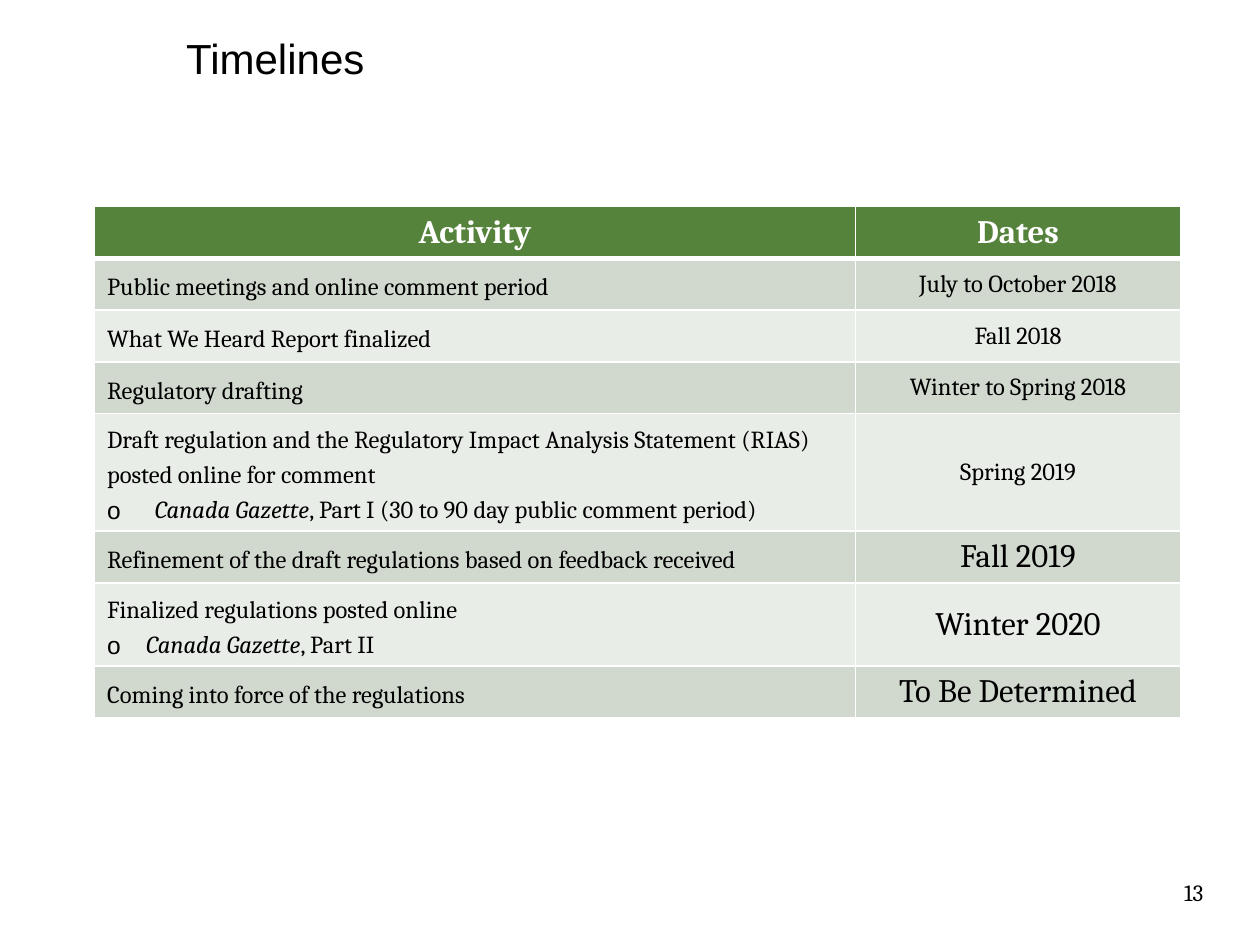
import pptx
import pptx.dml.color
import pptx.enum.text
import pptx.oxml
import pptx.oxml.ns
import pptx.util

Inches = pptx.util.Inches
Pt = pptx.util.Pt
COLORS = {"text": "000000", "white": "FFFFFF", "header": "55833B", "odd": "D1D9CE", "even": "E9EDE8"}
COLUMN_WIDTHS = [6.04, 2.58]
ROW_HEIGHTS = {1: 0.41, 2: 0.65, 3: 0.93}
SCHEDULE = [
    (["Public meetings and online comment period"], None, "July to October 2018", 14, 1),
    (["What We Heard Report finalized"], None, "Fall 2018", 14, 1),
    (["Regulatory drafting"], None, "Winter to Spring 2018", 14, 1),
    (["Draft regulation and the Regulatory Impact Analysis Statement (RIAS) posted online for comment",
      ", Part I (30 to 90 day public comment period)"], 0.38, "Spring 2019", 14, 3),
    (["Refinement of the draft regulations based on feedback received"], None, "Fall 2019", 18.7, 1),
    (["Finalized regulations posted online", ", Part II"], 0.31, "Winter 2020", 18.7, 2),
    (["Coming into force of the regulations"], None, "To Be Determined", 18.7, 1),
]


def rgb(name):
    """Return the named colour."""
    return pptx.dml.color.RGBColor.from_string(COLORS[name])


class SlideBuilder:
    """Hold the style and the current slide."""

    def __init__(self, slide, font="Cambria"):
        self.slide = slide
        self.font = font

    def run(self, paragraph, text, size, color="text", font=None, bold=False, italic=False):
        """Add one styled run."""
        run = paragraph.add_run()
        run.text = text
        run.font.name = font or self.font
        run.font.size = Pt(size)
        run.font.bold = bold
        run.font.italic = italic
        run.font.color.rgb = rgb(color)

    def text(self, box, text, size, font=None, spacing=None):
        """Add a text box with one line."""
        frame = self.slide.shapes.add_textbox(*map(Inches, box)).text_frame
        frame.word_wrap = True
        paragraph = frame.paragraphs[0]
        if spacing:
            paragraph.line_spacing = Pt(spacing)
        self.run(paragraph, text, size, font=font)

    def bullet(self, paragraph, indent):
        """Give a paragraph a hanging round-letter bullet."""
        properties = paragraph._p.get_or_add_pPr()
        properties.set("marL", str(Inches(indent)))
        properties.set("indent", str(-Inches(indent)))
        for tag, name, value in (("buFont", "typeface", "Arial"), ("buChar", "char", "o")):
            properties.append(pptx.oxml.parse_xml(
                f'<a:{tag} {pptx.oxml.ns.nsdecls("a")} {name}="{value}"/>'))

    def cell(self, cell, fill, bottom=1):
        """Fill and border a cell and return its first paragraph."""
        cell.vertical_anchor = pptx.enum.text.MSO_ANCHOR.MIDDLE
        properties = cell._tc.get_or_add_tcPr()
        for side, width in (("L", 1), ("R", 1), ("T", 1), ("B", bottom)):
            properties.append(pptx.oxml.parse_xml(
                f'<a:ln{side} {pptx.oxml.ns.nsdecls("a")} w="{Pt(width)}"><a:solidFill>'
                f'<a:srgbClr val="{COLORS["white"]}"/></a:solidFill></a:ln{side}>'))
        cell.fill.solid()
        cell.fill.fore_color.rgb = rgb(fill)
        return cell.text_frame.paragraphs[0]

    def centered(self, cell, text, size, fill, color="text", bold=False, bottom=1):
        """Write a centred cell."""
        paragraph = self.cell(cell, fill, bottom)
        paragraph.alignment = pptx.enum.text.PP_ALIGN.CENTER
        self.run(paragraph, text, size, color, bold=bold)

    def activity(self, cell, lines, indent, fill):
        """Write an activity and its optional gazette bullet."""
        paragraph = self.cell(cell, fill)
        paragraph.line_spacing = Pt(20)
        self.run(paragraph, lines[0], 14)
        for line in lines[1:]:
            paragraph = cell.text_frame.add_paragraph()
            paragraph.line_spacing = Pt(20)
            self.bullet(paragraph, indent)
            self.run(paragraph, "Canada Gazette", 14, italic=True)
            self.run(paragraph, line, 14)

    def table(self, left, top, headings, schedule):
        """Add the timeline table."""
        heights = [ROW_HEIGHTS[1]] + [ROW_HEIGHTS[entry[-1]] for entry in schedule]
        table = self.slide.shapes.add_table(
            len(heights), len(headings), Inches(left), Inches(top),
            Inches(sum(COLUMN_WIDTHS)), Inches(sum(heights))).table
        for column, width in zip(table.columns, COLUMN_WIDTHS):
            column.width = Inches(width)
        for row, height in zip(table.rows, heights):
            row.height = Inches(height)
        for index, heading in enumerate(headings):
            self.centered(table.cell(0, index), heading, 18.7, "header", "white", True, 3)
        for index, (lines, indent, date, size, _) in enumerate(schedule, 1):
            fill = "odd" if index % 2 else "even"
            self.activity(table.cell(index, 0), lines, indent, fill)
            self.centered(table.cell(index, 1), date, size, fill)


def main():
    """Build and save the slide."""
    presentation = pptx.Presentation()
    presentation.slide_width = Inches(10)
    presentation.slide_height = Inches(7.5)
    builder = SlideBuilder(presentation.slides.add_slide(presentation.slide_layouts[6]))
    builder.text((9.3, 6.92, 0.7, 0.33), "13", 13.3)
    builder.text((1.38, 0.33, 7.37, 0.75), "Timelines", 24, "Arial", 20)
    builder.table(0.75, 1.64, ["Activity", "Dates"], SCHEDULE)
    presentation.save("out.pptx")


if __name__ == "__main__":
    main()
